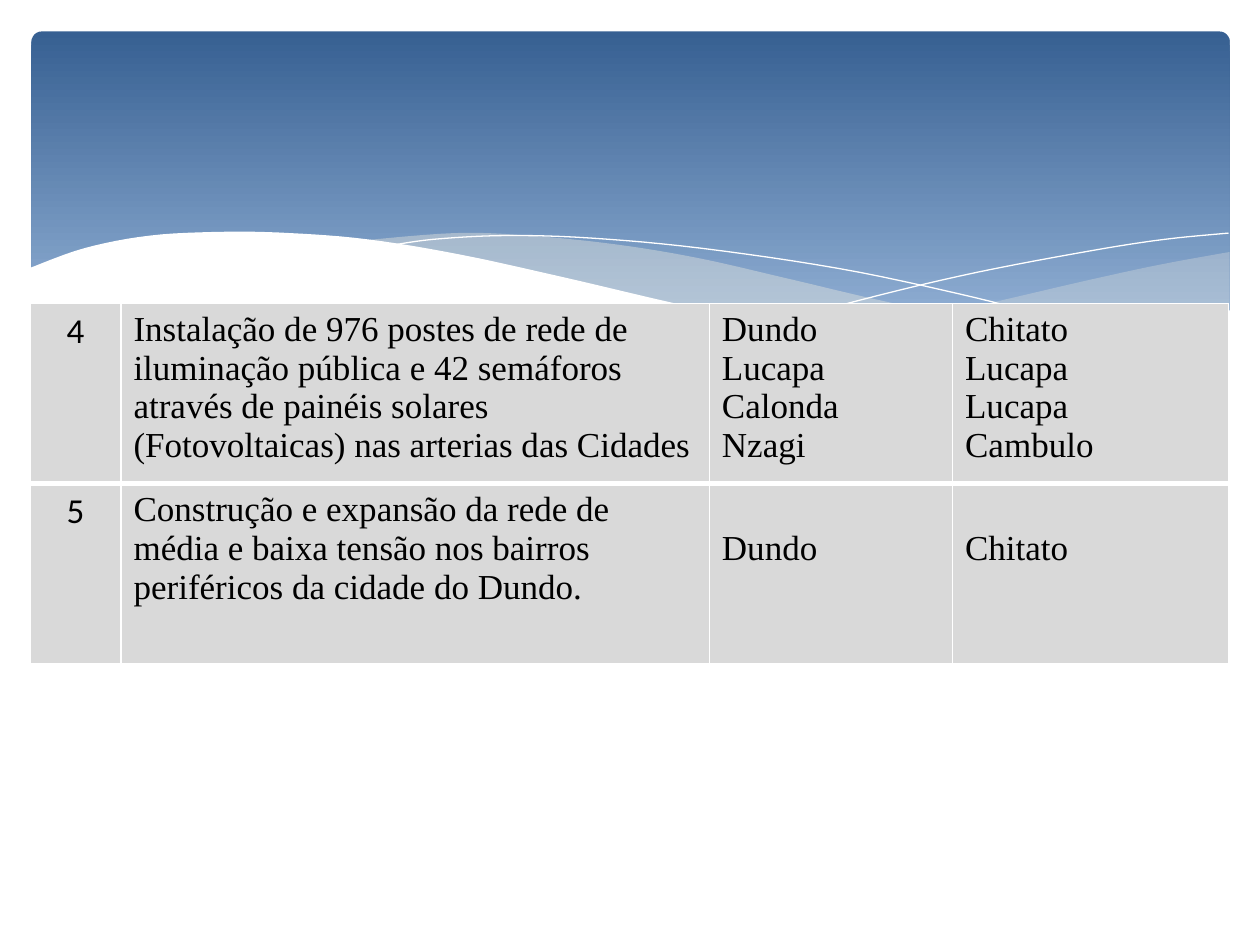
from lxml.etree import SubElement
from pptx import Presentation
from pptx.dml.color import RGBColor
from pptx.enum.shapes import MSO_SHAPE as Preset
from pptx.enum.text import PP_ALIGN as Align
from pptx.oxml import parse_xml
from pptx.oxml.ns import nsdecls, qn
from pptx.util import Inches, Pt

WHITE = RGBColor(0xFF, 0xFF, 0xFF)
BLACK = RGBColor(0, 0, 0)
CELL_GREY = RGBColor(0xD9, 0xD9, 0xD9)
DEEP_BLUE = RGBColor(0x37, 0x60, 0x92)
LIGHT_BLUE = RGBColor(0x95, 0xB3, 0xD7)
CREAM = RGBColor(0xEE, 0xEC, 0xE1)

PROJECTS = [
    ("4",
     "Instalação de 976 postes de rede de iluminação pública e 42 semáforos "
     "através de painéis solares (Fotovoltaicas) nas arterias das Cidades",
     "Dundo\nLucapa\nCalonda\nNzagi",
     "Chitato\nLucapa\nLucapa\nCambulo"),
    ("5",
     "Construção e expansão da rede de média e baixa tensão nos bairros "
     "periféricos da cidade do Dundo.",
     "Dundo",
     "Chitato"),
]
COLUMNS = (0.72, 4.67, 1.93, 2.19)
ROW_HEIGHT = 1.43
ROW_BORDERS = [{"L": 1, "R": 1, "T": 1, "B": 3}, {"L": 1, "R": 1, "T": 3, "B": 1}]
TOP_MARGIN = 0.05
LINE_HEIGHT = 0.31

RIGHT_WAVE = [
    [(9.76, 2), (9.21, 2.1), (8.61, 2.23), (7.79, 2.42), (7.06, 2.57), (6.61, 2.65)],
    [(6.61, 2.65), (7.19, 2.72), (7.81, 2.77), (8.35, 2.77), (8.89, 2.72),
     (9.35, 2.62), (9.76, 2.47)],
]
MIDDLE_WAVE = [
    [(8.93, 2.73), (8.07, 2.6), (7.06, 2.4), (6.29, 2.22), (5.55, 2.05),
     (4.89, 1.94), (4.2, 1.87), (3.61, 1.85), (2.86, 1.91)],
    [(2.86, 1.91), (3.62, 2.03), (4.49, 2.22), (5.3, 2.4), (6.01, 2.55),
     (6.8, 2.68), (7.48, 2.76), (8.18, 2.78), (8.93, 2.73)],
]
WHITE_WAVE = [
    [(9.77, 2.46), (9.3, 2.62), (8.75, 2.73), (8.09, 2.77), (7.26, 2.72),
     (6.48, 2.62), (5.55, 2.45), (4.47, 2.2), (3.65, 2.02), (2.92, 1.9),
     (2.3, 1.85), (1.77, 1.84), (1.19, 1.87), (0.67, 1.97), (0.23, 2.13)],
    [(0.23, 3.29), (9.77, 3.29)],
]
FALLING_LINE = [[(3.09, 1.95), (3.44, 1.9), (4.01, 1.87), (4.69, 1.89), (5.56, 1.97),
                 (6.65, 2.13), (7.6, 2.33), (8.31, 2.51), (9.07, 2.72)]]
RISING_LINE = [[(6.13, 2.57), (6.95, 2.35), (7.76, 2.16), (8.66, 1.99),
                (9.24, 1.9), (9.75, 1.85)]]


def smooth(knots, steps=6):
    padded = [knots[0], *knots, knots[-1]]
    points = [knots[0]]
    for a, b, c, d in zip(padded, padded[1:], padded[2:], padded[3:]):
        for step in range(1, steps + 1):
            t = step / steps
            points.append(tuple(
                q + t / 2 * (r - p + t * (2 * p - 5 * q + 4 * r - s
                                          + t * (3 * q - p - 3 * r + s)))
                for p, q, r, s in zip(a, b, c, d)))
    return points


def draw_wave(page, curves, fill=None, opacity=100):
    points = [(Inches(x), Inches(y)) for knots in curves for x, y in smooth(knots)]
    builder = page.shapes.build_freeform(*points[0])
    builder.add_line_segments(points[1:], close=fill is not None)
    wave = builder.convert_to_shape()
    wave.shadow.inherit = False
    if fill is None:
        wave.fill.background()
        wave.line.color.rgb = WHITE
        wave.line.width = Pt(0)
        return
    wave.line.fill.background()
    wave.fill.solid()
    wave.fill.fore_color.rgb = fill
    color = wave._element.spPr.find(qn("a:solidFill"))[0]
    SubElement(color, qn("a:alpha"), val=str(opacity * 1000))


def draw_banner(page):
    banner = page.shapes.add_shape(Preset.ROUNDED_RECTANGLE, Inches(0.25), Inches(0.25),
                                   Inches(9.51), Inches(2.7))
    banner.adjustments[0] = 0.03
    banner.shadow.inherit = False
    banner.line.fill.background()
    banner.fill.gradient()
    banner.fill.gradient_angle = 270
    stops = zip(banner.fill.gradient_stops, (DEEP_BLUE, LIGHT_BLUE), (0, 0.9))
    for stop, color, position in stops:
        stop.color.rgb = color
        stop.position = position


def format_cell(cell, text, is_number, borders):
    cell.text = text
    cell.fill.solid()
    cell.fill.fore_color.rgb = CELL_GREY
    for para in cell.text_frame.paragraphs:
        para.font.size = Pt(20)
        para.font.name = "Calibri" if is_number else "Times New Roman"
        para.font.color.rgb = BLACK
        if is_number:
            para.alignment = Align.CENTER
    properties = cell._tc.get_or_add_tcPr()
    for index, (side, width) in enumerate(borders.items()):
        properties.insert(index, parse_xml(
            f'<a:ln{side} {nsdecls("a")} w="{Pt(width)}"><a:solidFill>'
            f'<a:srgbClr val="{WHITE}"/></a:solidFill></a:ln{side}>'))


def draw_projects(page):
    table = page.shapes.add_table(
        len(PROJECTS), len(COLUMNS), Inches(0.24), Inches(2.41),
        Inches(sum(COLUMNS)), Inches(ROW_HEIGHT * len(PROJECTS))).table
    table.first_row = table.horz_banding = False
    for column, width in zip(table.columns, COLUMNS):
        column.width = Inches(width)
    for row, project, borders in zip(table.rows, PROJECTS, ROW_BORDERS):
        row.height = Inches(ROW_HEIGHT)
        for index, (cell, text) in enumerate(zip(row.cells, project)):
            format_cell(cell, text, index == 0, borders)
    for cell in list(table.rows[1].cells)[2:]:
        cell.margin_top = Inches(TOP_MARGIN + LINE_HEIGHT)


def main():
    deck = Presentation()
    deck.slide_width, deck.slide_height = Inches(10), Inches(7.5)
    page = deck.slides.add_slide(deck.slide_layouts[6])
    draw_banner(page)
    draw_wave(page, RIGHT_WAVE, CREAM, 29)
    draw_wave(page, MIDDLE_WAVE, CREAM, 40)
    draw_wave(page, FALLING_LINE)
    draw_wave(page, RISING_LINE)
    draw_wave(page, WHITE_WAVE, WHITE)
    draw_projects(page)
    deck.save("out.pptx")


if __name__ == "__main__":
    main()
